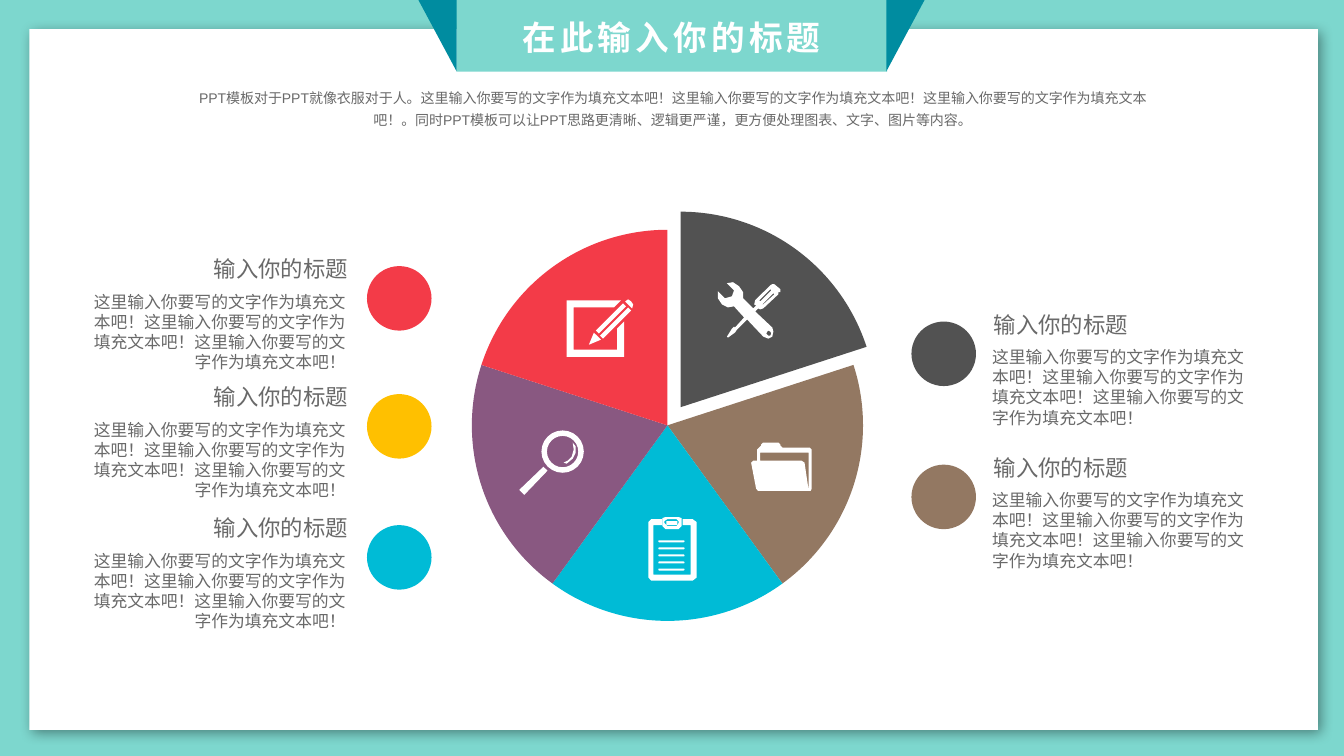
from dataclasses import dataclass

from lxml import etree
from pptx import Presentation
from pptx import util as u
from pptx.dml import color
from pptx.enum import shapes, text
from pptx.oxml import ns

Inches = u.Inches
Kind = shapes.MSO_SHAPE
Align = text.PP_ALIGN
Anchor = text.MSO_ANCHOR


@dataclass(frozen=True)
class Theme:
    font: str = "Arial"
    mint: str = "7DD7CE"
    teal: str = "008CA0"
    white: str = "FFFFFF"
    black: str = "000000"
    ink: str = "696969"
    gray: str = "525252"
    brown: str = "937862"
    cyan: str = "00BBD6"
    plum: str = "895881"
    red: str = "F33B48"
    gold: str = "FFC000"
    title: int = 24
    head: int = 16
    body: int = 12
    intro: int = 10


THEME = Theme()
TITLE = "在此输入你的标题"
HEAD = "输入你的标题"
FILL = "这里输入你要写的文字作为填充文本吧！"
INTRO = (
    "PPT模板对于PPT就像衣服对于人。" + FILL * 3
    + "。同时PPT模板可以让PPT思路更清晰、逻辑更严谨，更方便处理图表、文字、图片等内容。"
)
ITEMS = [
    ("right", 4.61, THEME.brown),
    ("left", 5.21, THEME.cyan),
    ("left", 3.91, THEME.gold),
    ("left", 2.64, THEME.red),
    ("right", 3.19, THEME.gray),
]
SIDES = {
    "left": (3.64, (1.35, 2.2), (0.89, 2.54), Align.RIGHT),
    "right": (9.04, (9.76, 2.18), (9.84, 2.55), Align.LEFT),
}
SLICES = [THEME.gray, THEME.brown, THEME.cyan, THEME.plum, THEME.red]
TOOLS = [
    [(7.74, 2.87), (7.68, 2.82), (7.66, 2.82), (7.64, 2.83), (7.49, 2.98),
     (7.48, 3.02), (7.5, 3.03), (7.47, 3.06), (7.37, 2.96), (7.37, 2.9),
     (7.33, 2.84), (7.27, 2.8), (7.21, 2.81), (7.28, 2.88), (7.26, 2.94),
     (7.19, 2.96), (7.12, 2.89), (7.12, 2.96), (7.16, 3.02), (7.22, 3.05),
     (7.28, 3.04), (7.38, 3.15), (7.29, 3.25), (7.28, 3.24), (7.26, 3.26),
     (7.21, 3.34), (7.22, 3.35), (7.29, 3.3), (7.31, 3.27), (7.41, 3.17),
     (7.57, 3.34), (7.62, 3.36), (7.66, 3.34), (7.67, 3.29), (7.66, 3.25),
     (7.49, 3.09), (7.52, 3.06), (7.54, 3.07), (7.57, 3.06), (7.72, 2.92),
     (7.72, 2.9), (7.74, 2.9)],
    [(7.62, 3.28), (7.64, 3.29), (7.65, 3.31), (7.64, 3.33),
     (7.62, 3.33), (7.6, 3.31), (7.61, 3.29)],
    [(7.54, 2.99), (7.53, 2.98), (7.64, 2.87), (7.65, 2.88)],
    [(7.57, 3.02), (7.56, 3.02), (7.67, 2.91), (7.68, 2.92)],
]
FOLDER = [
    [(8.05, 4.85), (8.05, 4.46), (8.03, 4.44), (7.76, 4.44), (7.74, 4.42),
     (7.74, 4.41), (7.72, 4.39), (7.57, 4.39), (7.55, 4.41), (7.55, 4.42),
     (7.53, 4.44), (7.51, 4.46), (7.51, 4.57), (7.47, 4.57), (7.45, 4.59),
     (7.5, 4.85), (7.52, 4.87), (8.04, 4.87)],
    [(8.02, 4.6), (8.02, 4.86), (7.98, 4.59), (7.95, 4.57), (7.54, 4.57),
     (7.54, 4.49), (8.02, 4.49)],
]
PENCIL = [
    [(5.96, 3.37), (5.89, 3.3), (5.84, 3.42)],
    [(6.18, 3.01), (5.91, 3.28), (5.94, 3.31), (6.21, 3.04)],
    [(5.95, 3.33), (5.98, 3.36), (6.26, 3.08), (6.23, 3.05)],
    [(6.2, 2.99), (6.23, 2.97), (6.26, 2.99), (6.28, 3.02), (6.27, 3.06)],
    [(6.12, 3.47), (5.69, 3.47), (5.69, 3.05), (6.09, 3.05), (6.16, 2.98),
     (5.62, 2.98), (5.62, 3.54), (6.19, 3.54), (6.19, 3.19), (6.12, 3.26)],
]
BOARD = [
    (6.87, 5.15), (6.77, 5.15), (6.77, 5.21), (6.85, 5.21), (6.85, 5.7),
    (6.48, 5.7), (6.48, 5.21), (6.57, 5.21), (6.57, 5.15), (6.46, 5.15),
    (6.43, 5.18), (6.43, 5.73), (6.46, 5.76), (6.87, 5.76), (6.91, 5.73),
    (6.91, 5.18),
]
CLIP = [
    [(6.6, 5.25), (6.73, 5.25), (6.76, 5.22), (6.76, 5.14), (6.73, 5.13),
     (6.6, 5.13), (6.57, 5.14), (6.57, 5.22)],
    [(6.59, 5.17), (6.62, 5.15), (6.71, 5.15), (6.73, 5.17), (6.73, 5.19),
     (6.71, 5.22), (6.62, 5.22), (6.59, 5.19)],
]
HANDLE = [(5.15, 4.86), (5.2, 4.91), (5.43, 4.67), (5.39, 4.63)]
GLINT = [(5.68, 4.39), (5.69, 4.46), (5.67, 4.53), (5.63, 4.57),
         (5.59, 4.59), (5.62, 4.6), (5.68, 4.55), (5.71, 4.49), (5.71, 4.43)]


def paint(shape, tint):
    shape.shadow.inherit = False
    shape.fill.solid()
    shape.fill.fore_color.rgb = color.RGBColor.from_string(tint)
    shape.line.fill.background()
    return shape


def place(shape, box):
    shape.left, shape.top, shape.width, shape.height = map(Inches, box)


def form(home, kind, box, tint, *turns):
    shape = paint(home.add_shape(kind, *map(Inches, box)), tint)
    for i, turn in enumerate(turns):
        shape.adjustments[i] = turn
    return shape


def trace(home, *loops):
    pen = None
    for loop in loops:
        pts = [(Inches(x), Inches(y)) for x, y in loop]
        if pen is None:
            pen = home.build_freeform(*pts[0])
        else:
            pen.move_to(*pts[0])
        pen.add_line_segments(pts[1:], close=True)
    return paint(pen.convert_to_shape(), THEME.white)


def write(shape, words, size, tint, align, pad=(0.1, 0.05),
          anchor=Anchor.TOP, wrap=True):
    frame = shape.text_frame
    frame.word_wrap = wrap
    frame.auto_size = text.MSO_AUTO_SIZE.NONE
    frame.vertical_anchor = anchor
    frame.margin_left = frame.margin_right = Inches(pad[0])
    frame.margin_top = frame.margin_bottom = Inches(pad[1])
    para = frame.paragraphs[0]
    para.alignment = align
    run = para.add_run()
    run.text = words
    run.font.name = THEME.font
    run.font.size = u.Pt(size)
    run.font.color.rgb = color.RGBColor.from_string(tint)
    return para, run


def label(home, box, *args, **opts):
    return write(home.add_textbox(*map(Inches, box)), *args, **opts)


def panel(home):
    shape = form(home, Kind.RECTANGLE, (0.29, 0.29, 12.78, 6.95), THEME.white)
    effect = shape._element.spPr.find(ns.qn("a:effectLst"))
    shade = etree.SubElement(
        effect, ns.qn("a:outerShdw"), blurRad=str(u.Pt(9)),
        dist=str(u.Pt(4)), dir=str(45 * 60000), algn="tl", rotWithShape="0")
    tone = etree.SubElement(shade, ns.qn("a:srgbClr"), val=THEME.black)
    etree.SubElement(tone, ns.qn("a:alpha"), val="40000")


def entry(home, side, top, tint):
    dot, head, body, align = SIDES[side]
    form(home, Kind.OVAL, (dot, top, 0.64, 0.64), tint)
    group = home.add_group_shape().shapes
    label(group, (head[0], top - 0.12, head[1], 0.29), HEAD, THEME.head,
          THEME.ink, align, anchor=Anchor.MIDDLE)
    label(group, (body[0], top + 0.25, body[1], 0.81), FILL * 3, THEME.body,
          THEME.ink, align, pad=(0, 0))


def wheel(home):
    step = 360 / len(SLICES)
    for i, tint in enumerate(SLICES):
        spot = (4.68, 2.28) if i else (4.81, 2.1)
        start = (270 + i * step) % 360
        end = (start + step) % 360
        form(home, Kind.PIE, (*spot, 3.88, 3.88), tint, start * 0.6, end * 0.6)


def icons(home):
    trace(home, *TOOLS)
    trace(home, *FOLDER)
    for part in PENCIL:
        trace(home, part)
    for i in range(5):
        form(home, Kind.ROUNDED_RECTANGLE, (6.53, 5.36 + i * 0.07, 0.26, 0.02),
             THEME.white, 0.5)
    trace(home, BOARD)
    form(home, Kind.RECTANGLE, (6.61, 5.17, 0.11, 0.04), THEME.white)
    trace(home, *CLIP)
    form(home, Kind.DONUT, (5.37, 4.27, 0.42, 0.42), THEME.white, 0.13)
    trace(home, HANDLE)
    trace(home, GLINT)


def banner(slide):
    home = slide.shapes
    form(home, Kind.RECTANGLE, (4.53, 0, 4.27, 0.71), THEME.mint)
    for left, flips in ((8.79, ["flipV"]), (4.15, ["flipH", "flipV"])):
        fold = form(home, Kind.ISOSCELES_TRIANGLE, (left, 0, 0.38, 0.71),
                    THEME.teal, 0)
        for flip in flips:
            fold._element.spPr.xfrm.set(flip, "1")
    title = home.title
    place(title, (5.08, 0.14, 3.16, 0.47))
    run = write(title, TITLE, THEME.title, THEME.white, Align.CENTER,
                pad=(0.07, 0.03), wrap=False)[1]
    run.font.bold = True
    run._r.get_or_add_rPr().set("spc", "300")
    home._spTree.append(title._element)


def main():
    deck = Presentation()
    deck.slide_width, deck.slide_height = Inches(13.33), Inches(7.5)
    slide = deck.slides.add_slide(deck.slide_layouts[5])
    slide.background.fill.solid()
    slide.background.fill.fore_color.rgb = color.RGBColor.from_string(THEME.mint)
    home = slide.shapes
    panel(home)
    for item in ITEMS:
        entry(home, *item)
    group = home.add_group_shape().shapes
    wheel(group)
    icons(group)
    banner(slide)
    para = label(home, (1.89, 0.81, 9.56, 0.5), INTRO, THEME.intro, THEME.ink,
                 Align.CENTER, pad=(0.07, 0.03), anchor=Anchor.MIDDLE)[0]
    para.line_spacing = 1.3
    deck.save("out.pptx")


if __name__ == "__main__":
    main()
